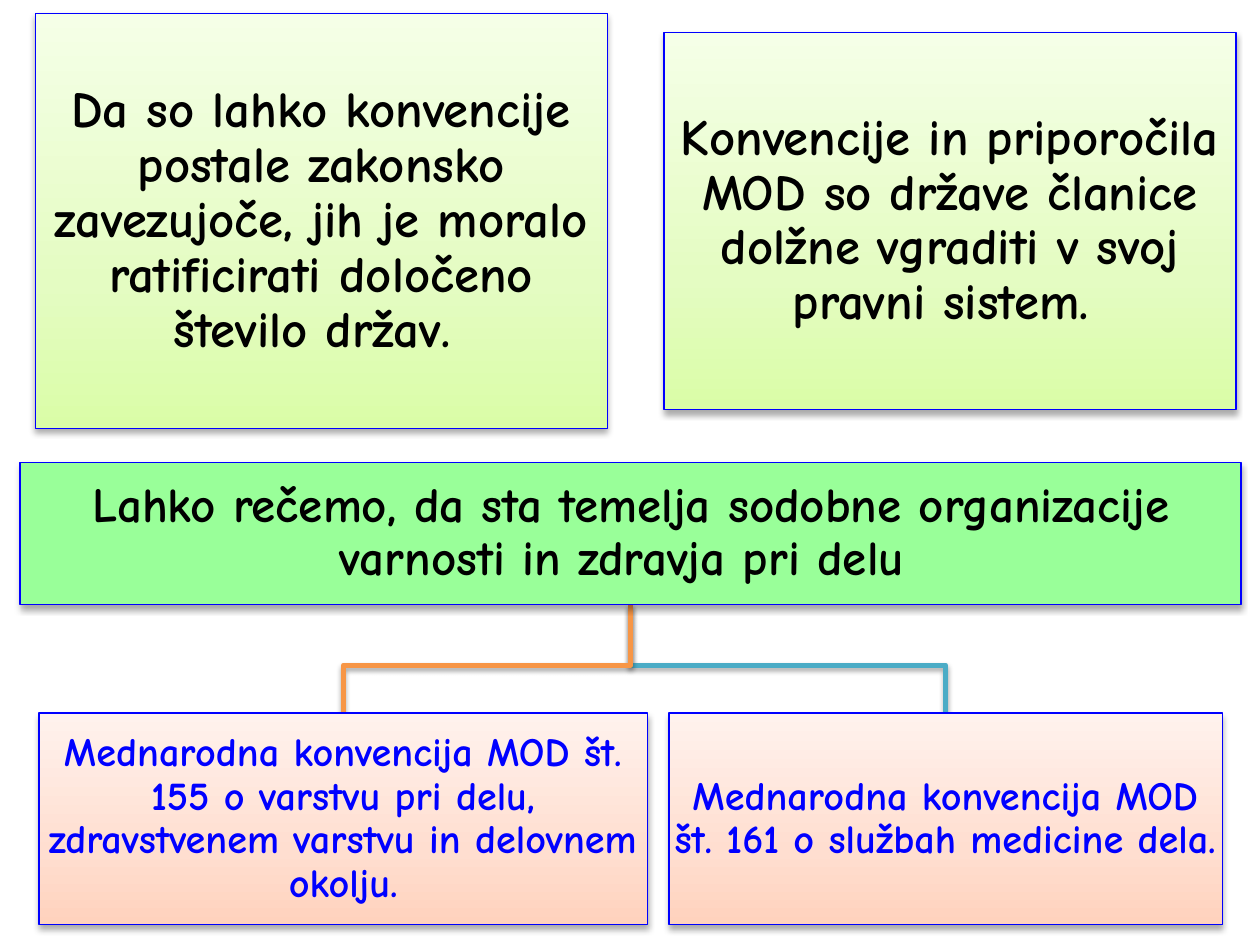
from lxml import etree
from pptx import Presentation
from pptx.dml.color import RGBColor
from pptx.enum import shapes, text
from pptx.oxml.ns import qn
from pptx.util import Inches, Pt

FONT = "Comic Neue"
BLACK, BLUE = "000000", "0000FF"
LIME = [(0, "DAFDA7"), (35, "E4FCC2"), (100, "F5FFE7")]
PEACH = [(0, "FFD2BD"), (35, "FFDED0"), (100, "FFF2ED")]
GREEN = "99FF99"

# text, (left, top, width, height), fill, size, colour, inset
NOTES = [
    ("Da so lahko konvencije postale zakonsko zavezujoče, jih je moralo "
     "ratificirati določeno število držav. ",
     (0.28, 0.11, 4.54, 3.29), LIME, 29, BLACK, 0.12),
    ("Konvencije in priporočila MOD so države članice dolžne vgraditi "
     "v svoj pravni sistem. ",
     (5.27, 0.26, 4.54, 2.99), LIME, 29, BLACK, 0.12),
]
ROOT = ("Lahko rečemo, da sta temelja sodobne organizacije varnosti in "
        "zdravja pri delu ",
        (0.16, 3.67, 9.69, 1.13), GREEN, 28, BLACK, 0.02)
# box, branch colour
LEAVES = [
    (("Mednarodna konvencija MOD št. 161 o službah medicine dela.",
      (5.31, 5.66, 4.39, 1.68), PEACH, 23, BLUE, 0.02), "4BACC6"),
    (("Mednarodna konvencija MOD št. 155 o varstvu pri delu, "
      "zdravstvenem varstvu in delovnem okolju.",
      (0.31, 5.66, 4.83, 1.68), PEACH, 23, BLUE, 0.02), "F79646"),
]
BEND = 5.28


def rgb(code):
    return RGBColor.from_string(code)


def add_tint(parent, code, alpha=None):
    tint = etree.SubElement(parent, qn("a:srgbClr"), val=code)
    if alpha:
        etree.SubElement(tint, qn("a:alpha"), val=str(alpha * 1000))


def shade(shape, alpha, blur, dist):
    """Give the shape a soft shadow straight below it."""
    shape.shadow.inherit = False
    effect = shape._element.spPr.find(qn("a:effectLst"))
    shadow = etree.SubElement(
        effect, qn("a:outerShdw"), blurRad=str(Pt(blur)), dist=str(Pt(dist)),
        dir="5400000", rotWithShape="0")
    add_tint(shadow, BLACK, alpha)


def paint(shape, fill):
    """Fill with one colour, or with stops that run from bottom to top."""
    if isinstance(fill, str):
        shape.fill.solid()
        shape.fill.fore_color.rgb = rgb(fill)
        return
    shape.fill.gradient()
    shape.fill.gradient_angle = 90
    stops = shape._element.spPr.find(".//" + qn("a:gsLst"))
    for old in list(stops):
        stops.remove(old)
    for pos, code in fill:
        add_tint(etree.SubElement(stops, qn("a:gs"), pos=str(pos * 1000)), code)


def add_box(slide, words, place, fill, size, color, inset):
    box = slide.shapes.add_shape(shapes.MSO_SHAPE.RECTANGLE, *map(Inches, place))
    paint(box, fill)
    box.line.color.rgb = rgb(BLUE)
    box.line.width = Pt(0.75)
    shade(box, 32, 3.5, 2.2)
    frame = box.text_frame
    frame.word_wrap = True
    frame.vertical_anchor = text.MSO_ANCHOR.MIDDLE
    frame.margin_left = frame.margin_right = Inches(inset)
    frame.margin_top = frame.margin_bottom = Inches(inset)
    para = frame.paragraphs[0]
    para.alignment = text.PP_ALIGN.CENTER
    para.line_spacing = 0.9
    run = para.add_run()
    run.text = words
    run.font.name, run.font.size, run.font.bold = FONT, Pt(size), True
    run.font.color.rgb = rgb(color)


def add_branch(slide, root, leaf, color):
    """Draw a bent line from the foot of root to the top of leaf."""
    start = root[0] + root[2] / 2
    end = leaf[0] + leaf[2] / 2
    pen = slide.shapes.build_freeform(
        Inches(start), Inches(root[1] + root[3]), scale=1.0)
    pen.add_line_segments(
        [(Inches(x), Inches(y))
         for x, y in ((start, BEND), (end, BEND), (end, leaf[1]))], close=False)
    line = pen.convert_to_shape()
    line.fill.background()
    line.line.color.rgb = rgb(color)
    line.line.width = Pt(3)
    shade(line, 35, 3.1, 1.8)


def main():
    deck = Presentation()
    deck.slide_width, deck.slide_height = Inches(10), Inches(7.5)
    slide = deck.slides.add_slide(deck.slide_layouts[6])
    for note in NOTES:
        add_box(slide, *note)
    for leaf, color in LEAVES:
        add_branch(slide, ROOT[1], leaf[1], color)
    add_box(slide, *ROOT)
    for leaf, _ in LEAVES:
        add_box(slide, *leaf)
    deck.save("out.pptx")


if __name__ == "__main__":
    main()
